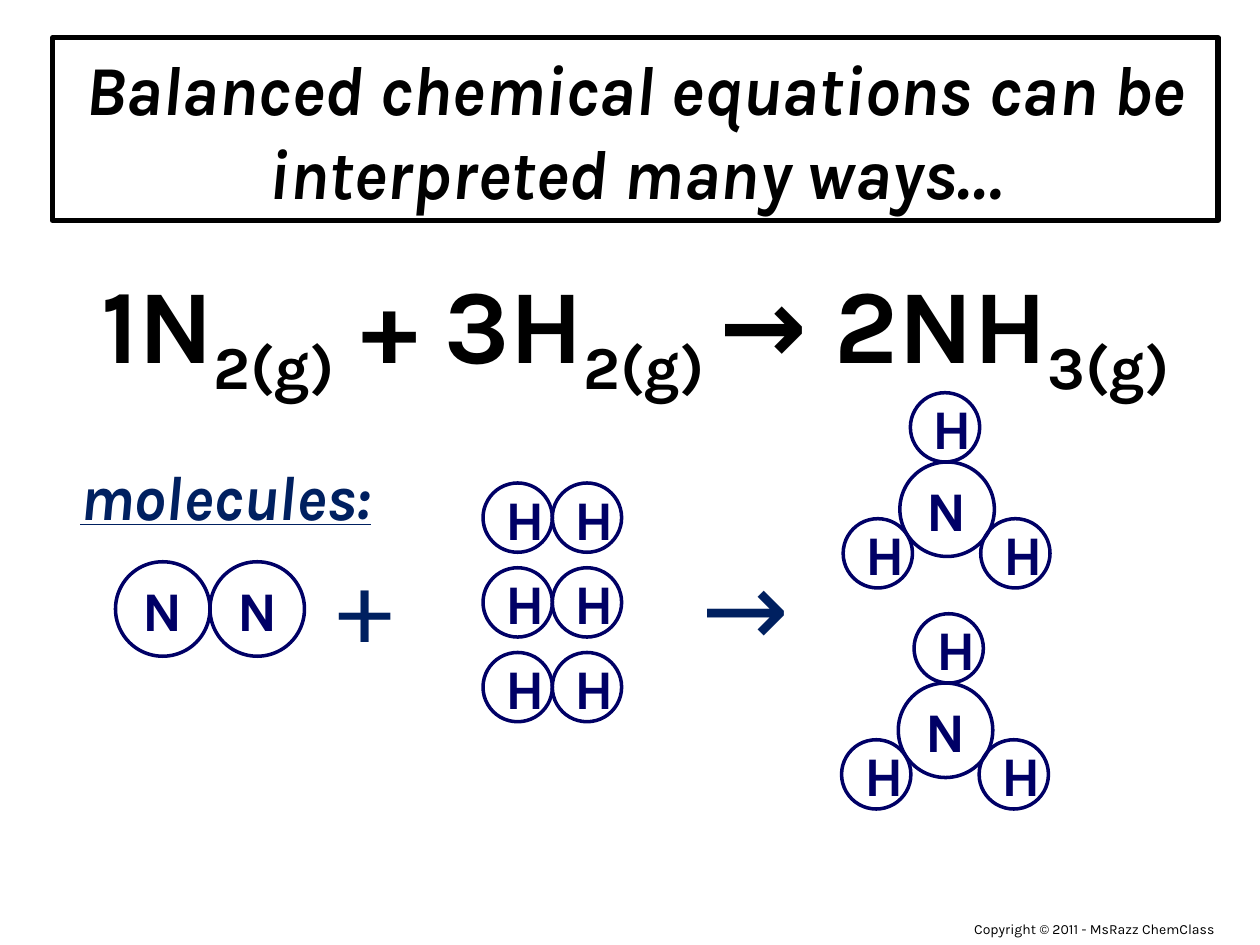
from lxml import etree
from pptx import Presentation, util as u
from pptx.dml.color import RGBColor
from pptx.enum import shapes, text
from pptx.oxml.ns import qn

COLORS = {"ink": "000000", "paper": "FFFFFF", "label": "002060", "atom": "000066"}
FONT = "Karla"
COLUMNS, ROWS = 120, 90  # square grid cells on a 10 x 7.5 inch slide
WIDTH, HEIGHT = u.Inches(10), u.Inches(7.5)
DIAMETER = {"N": 9, "H": 6.6}  # in grid cells


def rgb(name):
    return RGBColor.from_string(COLORS[name])


def cells(box):
    """Turn a (column, row, columns, rows) box into slide lengths."""
    col, row, cols, rows = box
    return [round(n) for n in (col * WIDTH / COLUMNS, row * HEIGHT / ROWS,
                               cols * WIDTH / COLUMNS, rows * HEIGHT / ROWS)]


def style(paragraph, size, color, bold=False, italic=False, underline=None, align=None):
    paragraph.alignment = align
    for run in paragraph.runs:
        font = run.font
        font.name, font.size = FONT, u.Pt(size)
        font.color.rgb = rgb(color)
        font.bold, font.italic, font.underline = bold, italic, underline


def label(slide, box, wording, size, color, **looks):
    frame = slide.shapes.add_textbox(*cells(box)).text_frame
    frame.word_wrap = True
    frame.text = wording
    style(frame.paragraphs[0], size, color, **looks)


def heading(slide, box):
    title = slide.shapes.title
    title.left, title.top, title.width, title.height = cells(box)
    title.fill.solid()
    title.fill.fore_color.rgb = rgb("paper")
    tint = title.fill._xPr.find(qn("a:solidFill"))[0]
    etree.SubElement(tint, qn("a:alpha")).set("val", "75000")
    title.line.color.rgb = rgb("ink")
    title.line.width = u.Pt(3)
    frame = title.text_frame
    frame.text = "Balanced chemical equations can be interpreted many ways…"
    frame.auto_size = text.MSO_AUTO_SIZE.NONE
    frame.vertical_anchor = text.MSO_ANCHOR.MIDDLE
    style(frame.paragraphs[0], 40, "ink", bold=True, italic=True,
          align=text.PP_ALIGN.CENTER)


def equation(slide, box):
    frame = slide.shapes.add_textbox(*cells(box)).text_frame
    frame.word_wrap = True
    paragraph = frame.paragraphs[0]
    # Formula parts and subscripts alternate
    for i, part in enumerate(["1N", "2(g)", " + 3H", "2(g) ", "→ 2NH", "3(g)"]):
        run = paragraph.add_run()
        run.text = part
        if i % 2:
            run.font._element.set("baseline", "-25000")
    style(paragraph, 60, "ink", bold=True, align=text.PP_ALIGN.CENTER)


def molecule(slide, origin, atoms):
    """Group atoms given as (symbol, column, row) from the origin."""
    group = slide.shapes.add_group_shape()
    for symbol, col, row in atoms:
        size = DIAMETER[symbol]
        atom = group.shapes.add_shape(
            shapes.MSO_SHAPE.OVAL,
            *cells((origin[0] + col, origin[1] + row, size, size)))
        atom.shadow.inherit = False
        atom.fill.background()
        atom.line.color.rgb = rgb("atom")
        atom.line.width = u.Pt(2)
        frame = atom.text_frame
        frame.text = symbol
        frame.vertical_anchor = text.MSO_ANCHOR.MIDDLE
        style(frame.paragraphs[0], 32, "atom", bold=True, align=text.PP_ALIGN.CENTER)


def diatomic(slide, origin, symbol):
    molecule(slide, origin, [(symbol, 0, 0), (symbol, DIAMETER[symbol], 0)])


def ammonia(slide, origin, lean):
    """Nitrogen with one hydrogen above, leaning sideways, and two below."""
    molecule(slide, origin, [("N", 5.4, 6.6), ("H", 0, 12), ("H", 13.1, 12),
                             ("H", 6.6 + lean, 0)])


def reaction(slide, box):
    """Molecule drawing, placed from the top left of its box."""
    left, top = box[:2]
    label(slide, (left, top + 5.6, 33, 8.5), "molecules:", 36, "label", bold=True,
          italic=True, underline=True, align=text.PP_ALIGN.CENTER)
    # Reactants
    diatomic(slide, (left + 6, top + 16.1), "N")
    label(slide, (left + 26, top + 13.2, 7, 13.3), "+", 60, "label")
    for i in range(3):
        diatomic(slide, (left + 41, top + 8.6 + 8.07 * i), "H")
    # Products
    label(slide, (left + 60.6, top + 13.6, 13, 13.3), "→", 60, "label")
    ammonia(slide, (left + 75.3, top), -0.2)
    ammonia(slide, (left + 75.15, top + 21.05), 0.3)


def main():
    deck = Presentation()
    deck.slide_width, deck.slide_height = WIDTH, HEIGHT
    slide = deck.slides.add_slide(deck.slide_layouts[5])
    label(slide, (91.6, 87.1, 28.4, 2.9), "Copyright © 2011 - MsRazz ChemClass", 8, "ink")
    heading(slide, (5, 3.6, 111, 17.4))
    equation(slide, (3, 24, 115, 13.3))
    reaction(slide, (5, 37.4, 95, 40))
    deck.save("out.pptx")


if __name__ == "__main__":
    main()
